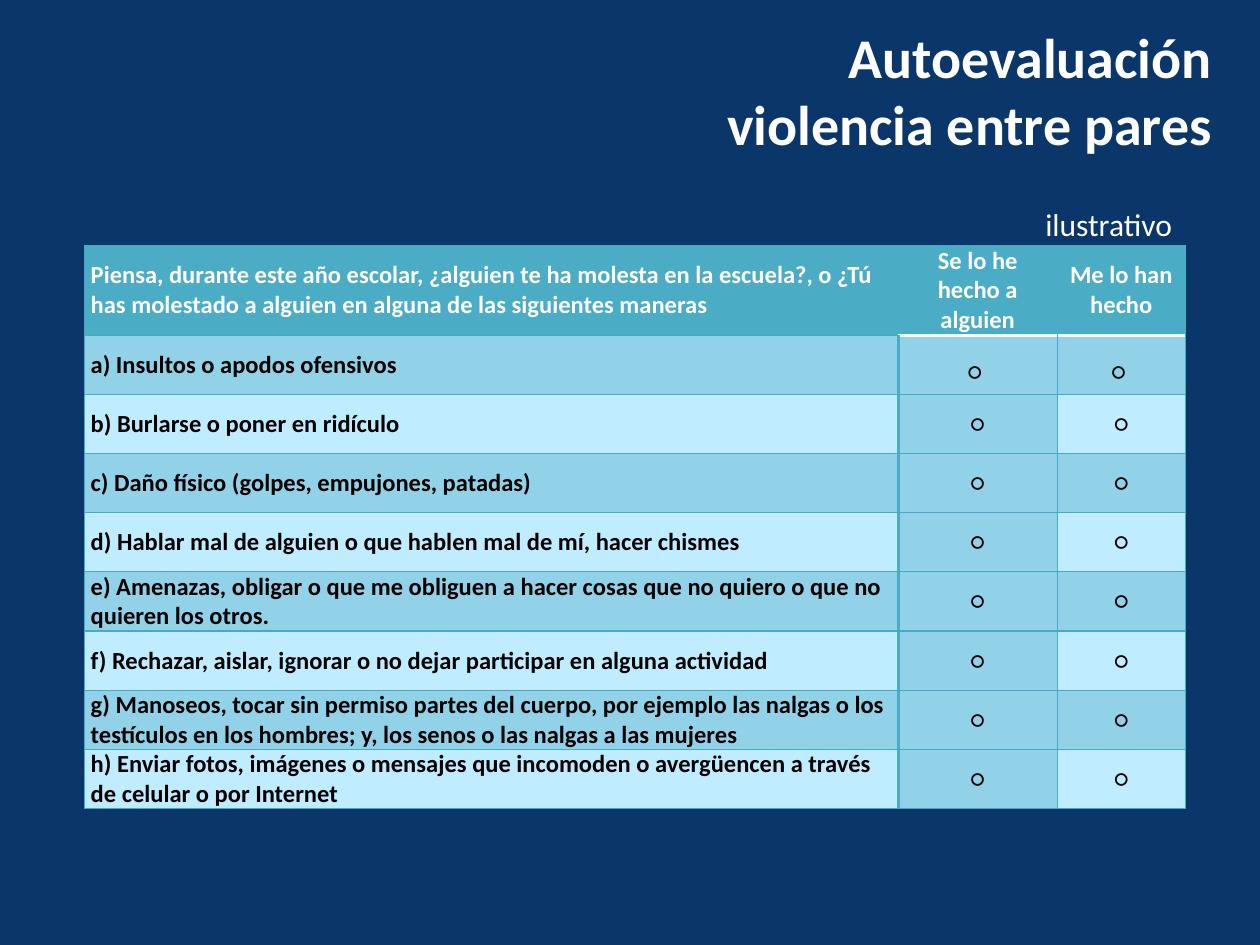
from lxml.etree import SubElement
from pptx import Presentation
from pptx.dml.color import RGBColor
from pptx.enum.text import MSO_ANCHOR, PP_ALIGN
from pptx.oxml.ns import qn
from pptx.util import Inches, Pt

NAVY = RGBColor(0x0A, 0x36, 0x6A)
WHITE = RGBColor(0xFF, 0xFF, 0xFF)
BLACK = RGBColor(0x00, 0x00, 0x00)
TEAL = RGBColor(0x4B, 0xAC, 0xC6)
EDGE = RGBColor(0x46, 0xAA, 0xC5)
MID = RGBColor(0x91, 0xD2, 0xE8)
PALE = RGBColor(0xBF, 0xEC, 0xFF)

FONT = "Calibri"
WIDTH, HEIGHT = Inches(10), Inches(7.5)
COLUMNS = [6.46, 1.26, 1.02]
HEADER_HEIGHT, ROW_HEIGHT = 0.71, 0.47
THIN, THICK = 0.75, 2

HEADERS = [
    "Piensa, durante este año escolar, ¿alguien te ha molesta en la escuela?, "
    "o ¿Tú has molestado a alguien en alguna de las siguientes maneras",
    "Se lo he hecho a alguien",
    "Me lo han hecho",
]
QUESTIONS = [
    "a) Insultos o apodos ofensivos",
    "b) Burlarse o poner en ridículo",
    "c) Daño físico (golpes, empujones, patadas)",
    "d) Hablar mal de alguien o que hablen mal de mí, hacer chismes",
    "e) Amenazas, obligar o que me obliguen a hacer cosas que no quiero o que no quieren los otros.",
    "f) Rechazar, aislar, ignorar o no dejar participar en alguna actividad",
    "g) Manoseos, tocar sin permiso partes del cuerpo, por ejemplo las nalgas "
    "o los testículos en los hombres; y, los senos o las nalgas a las mujeres",
    "h) Enviar fotos, imágenes o mensajes que incomoden o avergüencen a través "
    "de celular o por Internet",
]


def set_text(tf, text, size, color, bold=False, align=PP_ALIGN.LEFT):
    tf.text = text
    tf.word_wrap = True
    p = tf.paragraphs[0]
    p.alignment = align
    for r in p.runs:
        r.font.name = FONT
        r.font.size = Pt(size)
        r.font.bold = bold
        r.font.color.rgb = color
    return p


def add_label(s, x, y, w, h, text, size, bold=False, anchor=MSO_ANCHOR.TOP):
    box = s.shapes.add_textbox(int(WIDTH * x), int(HEIGHT * y), int(WIDTH * w), int(HEIGHT * h))
    box.text_frame.vertical_anchor = anchor
    set_text(box.text_frame, text, size, WHITE, bold, PP_ALIGN.RIGHT)


def set_borders(cell, borders):
    tcPr = cell._tc.get_or_add_tcPr()
    for side in "LRTB":
        color, width = borders.get(side, (EDGE, THIN))
        ln = SubElement(tcPr, qn(f"a:ln{side}"), w=str(Pt(width)))
        fill = SubElement(ln, qn("a:solidFill"))
        SubElement(fill, qn("a:srgbClr"), val=str(color))


def cell_borders(row, col):
    borders = {}
    if row == 0:
        borders["L"] = borders["R"] = (EDGE if col == 0 else TEAL, THIN)
        if col > 0:
            borders["B"] = (WHITE, THICK)
    else:
        if col < 2:
            borders["R" if col == 0 else "L"] = (TEAL, THICK)
        if row == 1 and col > 0:
            borders["T"] = (WHITE, THICK)
    return borders


def cell_fill(row, col):
    if row == 0:
        return TEAL
    return MID if col == 1 or row % 2 else PALE


def fill_cell(cell, row, col, text):
    cell.margin_left = cell.margin_right = Inches(0.05)
    cell.margin_top = cell.margin_bottom = 0
    cell.vertical_anchor = MSO_ANCHOR.MIDDLE
    set_borders(cell, cell_borders(row, col))
    cell.fill.solid()
    cell.fill.fore_color.rgb = cell_fill(row, col)
    p = set_text(
        cell.text_frame, text, 14,
        WHITE if row == 0 else BLACK,
        bold=row == 0 or col == 0,
        align=PP_ALIGN.CENTER if col else PP_ALIGN.LEFT,
    )
    if row == 1 and col:
        p.line_spacing = 1.5


def add_survey(s, x, y):
    marks = ["○ "] + ["○"] * (len(QUESTIONS) - 1)
    rows = [HEADERS] + [[q, m, m] for q, m in zip(QUESTIONS, marks)]
    heights = [HEADER_HEIGHT] + [ROW_HEIGHT] * len(QUESTIONS)
    table = s.shapes.add_table(
        len(rows), len(COLUMNS), int(WIDTH * x), int(HEIGHT * y),
        Inches(sum(COLUMNS)), Inches(sum(heights)),
    ).table
    for column, width in zip(table.columns, COLUMNS):
        column.width = Inches(width)
    for i, (texts, height) in enumerate(zip(rows, heights)):
        table.rows[i].height = Inches(height)
        for j, text in enumerate(texts):
            fill_cell(table.cell(i, j), i, j, text)


def main():
    prs = Presentation()
    prs.slide_width, prs.slide_height = WIDTH, HEIGHT
    s = prs.slides.add_slide(prs.slide_layouts[6])
    s.background.fill.solid()
    s.background.fill.fore_color.rgb = NAVY
    add_label(s, 0.185, 0.01, 0.787, 0.17, "Autoevaluación\vviolencia entre pares",
              32, bold=True, anchor=MSO_ANCHOR.MIDDLE)
    add_survey(s, 0.067, 0.26)
    add_label(s, 0.72, 0.21, 0.22, 0.05, "ilustrativo", 18)
    prs.save("out.pptx")


if __name__ == "__main__":
    main()
